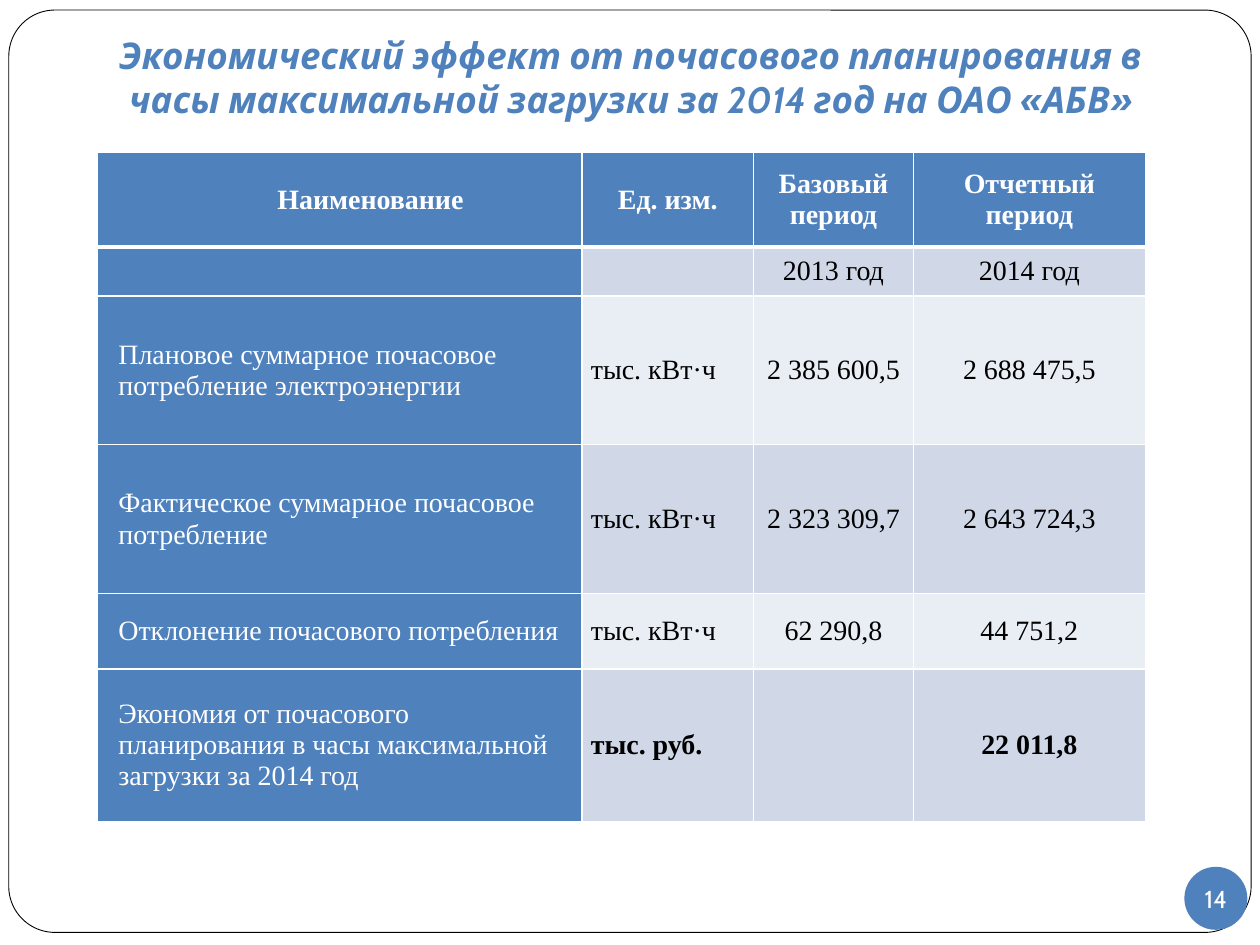
import pptx
import pptx.util
import pptx.dml.color
import pptx.enum.shapes
import pptx.enum.text
import pptx.oxml
import pptx.oxml.ns

Inches, Pt = pptx.util.Inches, pptx.util.Pt
Align = pptx.enum.text.PP_ALIGN
Mid = pptx.enum.text.MSO_ANCHOR.MIDDLE
Kind = pptx.enum.shapes.MSO_SHAPE

# Content
TITLE = ("Экономический эффект от почасового планирования в "
         "часы максимальной загрузки за 2014 год на ОАО «АБВ»")
PAGE = "14"
ROWS = [
    ("Наименование", "Ед. изм.", "Базовый период", "Отчетный период"),
    ("", "", "2013 год", "2014 год"),
    ("Плановое суммарное почасовое потребление электроэнергии",
     "тыс. кВт·ч", "2 385 600,5", "2 688 475,5"),
    ("Фактическое суммарное почасовое потребление",
     "тыс. кВт·ч", "2 323 309,7", "2 643 724,3"),
    ("Отклонение почасового потребления",
     "тыс. кВт·ч", "62 290,8", "44 751,2"),
    ("Экономия от почасового планирования в часы максимальной "
     "загрузки за 2014 год", "тыс. руб.", "", "22 011,8"),
]
WIDTHS = [3.85, 1.36, 1.27, 1.84]
HEIGHTS = [0.75, 0.39, 1.18, 1.18, 0.6, 1.21]
BLUE, WHITE, BLACK = "4F81BD", "FFFFFF", "000000"
BANDS = ["E9EDF4", "D0D8E8"]
SERIF, SANS = "Times New Roman", "Cabin"


def paint(target, color):
    if hasattr(target, "solid"):
        target.solid()
        target = target.fore_color
    target.rgb = pptx.dml.color.RGBColor.from_string(color)


def style(par, face, size, color, bold=False, italic=False):
    for run in par.runs:
        font = run.font
        font.name, font.size = face, Pt(size)
        font.bold, font.italic = bold, italic
        paint(font.color, color)


def shape(kind, box, fill):
    item = slide.shapes.add_shape(kind, *map(Inches, box))
    item.shadow.inherit = False
    paint(item.fill, fill)
    return item


def edge(cell, side, width):
    ns = pptx.oxml.ns.nsdecls("a")
    cell._tc.get_or_add_tcPr().append(pptx.oxml.parse_xml(
        f'<a:ln{side} {ns} w="{Pt(width)}"><a:solidFill>'
        f'<a:srgbClr val="{WHITE}"/></a:solidFill></a:ln{side}>'))


def indent(par, left, first):
    props = par._p.get_or_add_pPr()
    props.set("marL", str(Inches(left)))
    props.set("indent", str(Inches(first)))


deck = pptx.Presentation()
deck.slide_width, deck.slide_height = Inches(10), Inches(7.5)
slide = deck.slides.add_slide(deck.slide_layouts[6])

# Frame
frame = shape(Kind.ROUNDED_RECTANGLE, (0.07, 0.08, 9.86, 7.32), WHITE)
frame.adjustments[0] = 0.05
paint(frame.line.fill, BLACK)
frame.line.width = Pt(0.5)

# Page number
badge = shape(Kind.OVAL, (9.4, 6.88, 0.5, 0.5), BLUE)
badge.line.fill.background()
text = badge.text_frame
text.text, text.word_wrap, text.vertical_anchor = PAGE, False, Mid
text.margin_left = text.margin_right = text.margin_top = text.margin_bottom = 0
text.paragraphs[0].alignment = Align.CENTER
style(text.paragraphs[0], SANS, 14, WHITE)

# Title
text = slide.shapes.add_textbox(*map(Inches, (0.83, 0.21, 8.35, 0.81))).text_frame
text.text, text.word_wrap = TITLE, True
text.paragraphs[0].alignment = Align.CENTER
style(text.paragraphs[0], SANS, 21, BLUE, True, True)

# Table
table = slide.shapes.add_table(
    len(ROWS), len(WIDTHS), Inches(0.77), Inches(1.21),
    Inches(sum(WIDTHS)), Inches(sum(HEIGHTS))).table
for col, width in zip(table.columns, WIDTHS):
    col.width = Inches(width)
for row, height in zip(table.rows, HEIGHTS):
    row.height = Inches(height)

for r, row in enumerate(ROWS):
    for c, words in enumerate(row):
        cell = table.cell(r, c)
        head, name = r == 0, c == 0
        cell.text, cell.vertical_anchor = words, Mid
        cell.margin_left = cell.margin_right = Inches(0.07)
        cell.margin_top = cell.margin_bottom = 0
        for side in "LRTB":
            thick = (head and side == "B") or (r == 1 and side == "T")
            edge(cell, side, 3 if thick else 1)
        paint(cell.fill, BLUE if head or name else BANDS[r % 2])
        par = cell.text_frame.paragraphs[0]
        par.alignment = Align.CENTER if head or c > 1 else Align.LEFT
        if name:
            indent(par, *((0, 0.49) if head else (0.1, 0)))
        last = r == len(ROWS) - 1
        style(par, SERIF, 16, WHITE if head or name else BLACK,
              head or (last and not name))

deck.save("out.pptx")
